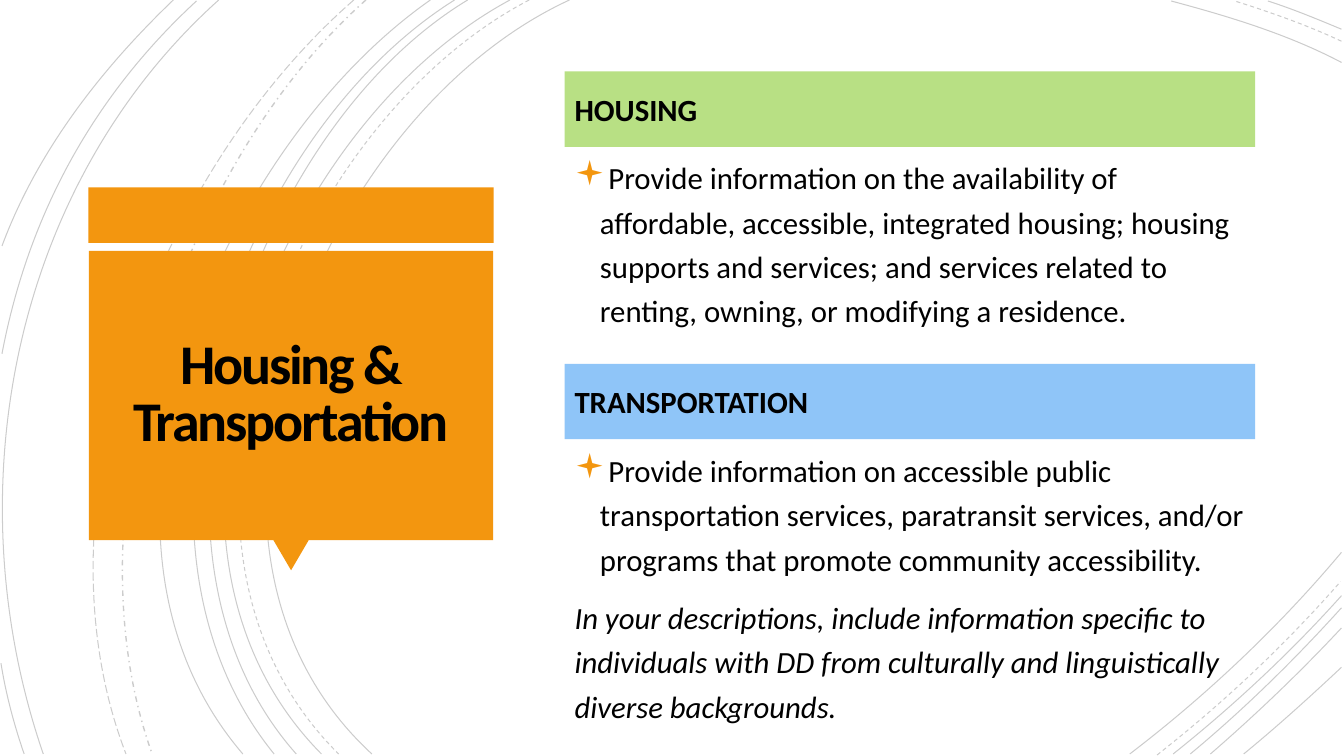
from lxml.etree import SubElement
from pptx import Presentation
from pptx.dml.color import RGBColor
from pptx.enum.dml import MSO_LINE as Dash
from pptx.enum.shapes import MSO_SHAPE as Kind
from pptx.enum.text import MSO_ANCHOR as Anchor, PP_ALIGN as Align
from pptx.oxml.ns import qn
from pptx.util import Cm, Pt

HUES = {"ink": "000000", "gold": "F3960F", "green": "B8E084", "blue": "8FC5F8"}
FONT = "Calibri"
UNIT = 2.54
LEFT, WIDE, HEAD = 14.23, 17.4, 1.9

ARCS = [
    (Dash.SOLID, (5.65, 0), (3.15, 1.15), (1.43, 5.4), (3.69, 7.48)),
    (Dash.SOLID, (13.31, 0.62), (12.78, 0.34), (12.18, 0.16), (11.62, 0.01)),
    (Dash.SOLID, (11.21, 7.48), (11.97, 6.9), (12.69, 6.22), (13.31, 5.48)),
    (Dash.DASH, (5.25, 0), (2.85, 1.25), (1.23, 5.37), (3.36, 7.48)),
    (Dash.DASH, (13.31, 0.41), (12.97, 0.25), (12.6, 0.12), (12.25, 0.01)),
    (Dash.DASH, (11.48, 7.49), (12.13, 6.98), (12.75, 6.4), (13.3, 5.77)),
    (Dash.SOLID, (5.06, 0), (2.7, 1.27), (1.1, 5.37), (3.19, 7.48)),
    (Dash.SOLID, (13.31, 0.29), (13.07, 0.19), (12.83, 0.09), (12.58, 0.01)),
    (Dash.SOLID, (11.64, 7.48), (12.23, 7.01), (12.8, 6.48), (13.31, 5.91)),
    (Dash.SOLID, (4.64, 0), (2.44, 1.33), (1.1, 5.41), (2.94, 7.48)),
    (Dash.SOLID, (11.81, 7.48), (12.34, 7.04), (12.84, 6.55), (13.31, 6.03)),
    (Dash.SOLID, (4.51, 0), (2.31, 1.38), (0.97, 5.33), (2.72, 7.48)),
    (Dash.SOLID, (12.01, 7.48), (12.46, 7.09), (12.9, 6.67), (13.31, 6.23)),
    (Dash.SOLID, (4.27, 0), (2.17, 1.47), (0.53, 5.29), (2.41, 7.48)),
    (Dash.SOLID, (12.34, 7.48), (12.67, 7.21), (12.99, 6.92), (13.31, 6.62)),
    (Dash.DASH_DOT, (3.63, 0), (1.76, 1.66), (0.65, 5.09), (1.51, 7.48)),
    (Dash.LONG_DASH, (3.51, 0), (1.57, 1.69), (0.29, 4.99), (1.25, 7.48)),
    (Dash.SOLID, (2.17, 0), (0.11, 1.85), (-0.46, 4.9), (0.43, 7.48)),
    (Dash.SOLID, (1.95, 0.01), (0.92, 0.96), (0.28, 2.14), (0.02, 3.51)),
    (Dash.SOLID, (0.01, 6.58), (0.06, 6.89), (0.14, 7.19), (0.24, 7.48)),
    (Dash.SOLID, (1.72, 0), (1, 0.69), (0.37, 1.5), (0.02, 2.44)),
]

TOPICS = [
    ("HOUSING", "green", 1.8, 4.72, [
        "Provide information on the availability of affordable, accessible, "
        "integrated housing; housing supports and services; and services "
        "related to renting, owning, or modifying a residence."]),
    ("TRANSPORTATION", "blue", 9.17, 2.82, [
        "Provide information on accessible public transportation services, "
        "paratransit services, and/or programs that promote community "
        "accessibility.",
        "In your descriptions, include information specific to individuals "
        "with DD from culturally and linguistically diverse backgrounds."]),
]


def hue(name):
    return RGBColor.from_string(HUES[name])


def bend(shape):
    legs = shape.element.xpath(".//a:path/a:lnTo")
    curve = SubElement(legs[0].getparent(), qn("a:cubicBezTo"))
    for leg in legs:
        curve.append(leg[0])
        leg.getparent().remove(leg)


def add_arc(slide, dash, *ends):
    spots = [tuple(Cm(UNIT * v) for v in end) for end in ends]
    outline = slide.shapes.build_freeform(*spots[0])
    outline.add_line_segments(spots[1:], close=False)
    arc = outline.convert_to_shape()
    bend(arc)
    arc.shadow.inherit = False
    arc.fill.background()
    arc.line.color.rgb = hue("ink")
    arc.line.width = Pt(1 if dash == Dash.DASH_DOT else 0.75)
    arc.line.dash_style = dash
    tint = arc.element.xpath(".//a:ln//a:srgbClr")[0]
    SubElement(tint, qn("a:alpha"), val="20000")


def add_block(slide, kind, fill, *box):
    block = slide.shapes.add_shape(kind, *map(Cm, box))
    block.shadow.inherit = False
    block.fill.solid()
    block.fill.fore_color.rgb = hue(fill)
    block.line.fill.background()
    return block


def add_box(slide, *box):
    frame = slide.shapes.add_textbox(*map(Cm, box)).text_frame
    frame.word_wrap = True
    return frame


def style(para, size, bold=False, italic=False):
    for run in para.runs:
        font = run.font
        font.name, font.size = FONT, Pt(size)
        font.bold, font.italic = bold, italic
        font.color.rgb = hue("ink")


def add_mark(para):
    props = para._p.get_or_add_pPr()
    props.set("marL", str(Cm(0.64)))
    props.set("indent", str(-Cm(0.64)))
    tint = SubElement(props, qn("a:buClr"))
    SubElement(tint, qn("a:srgbClr"), val=HUES["gold"])
    SubElement(props, qn("a:buSzPct"), val="110000")
    SubElement(props, qn("a:buFont"), typeface="Wingdings")
    SubElement(props, qn("a:buChar"), char="▪")


def add_title(slide):
    add_block(slide, Kind.RECTANGLE, "gold", 2.23, 4.72, 10.21, 1.4)
    tail = add_block(slide, Kind.ISOSCELES_TRIANGLE, "gold",
                     6.89, 13.61, 0.89, 0.76)
    tail.rotation = 180
    add_block(slide, Kind.RECTANGLE, "gold", 2.24, 6.32, 10.19, 7.29)
    frame = add_box(slide, 2.46, 6.57, 9.73, 6.83)
    frame.margin_top = frame.margin_bottom = Cm(0.25)
    frame.vertical_anchor = Anchor.MIDDLE
    para = frame.paragraphs[0]
    para.text = "Housing & Transportation"
    para.alignment = Align.CENTER
    para.line_spacing = 0.85
    style(para, 40, bold=True)
    para.runs[0].font._element.set("spc", "-150")


def add_topic(slide, name, fill, top, high, lines):
    frame = add_block(slide, Kind.RECTANGLE, fill,
                      LEFT, top, WIDE, HEAD).text_frame
    frame.word_wrap = True
    frame.vertical_anchor = Anchor.MIDDLE
    label = frame.paragraphs[0]
    label.text = name
    label.alignment = Align.LEFT
    label.space_before = Pt(10)
    style(label, 22, bold=True)

    frame = add_box(slide, LEFT, top + HEAD, WIDE, high)
    frame.text = "\n".join(lines)
    for n, para in enumerate(frame.paragraphs):
        para.line_spacing = 1.2
        para.space_before = Pt(10)
        style(para, 22, italic=n > 0)
    add_mark(frame.paragraphs[0])


def main():
    deck = Presentation()
    deck.slide_width, deck.slide_height = Cm(33.87), Cm(19.05)
    slide = deck.slides.add_slide(deck.slide_layouts[6])
    for arc in ARCS:
        add_arc(slide, *arc)
    add_title(slide)
    for topic in TOPICS:
        add_topic(slide, *topic)
    deck.save("out.pptx")


if __name__ == "__main__":
    main()
